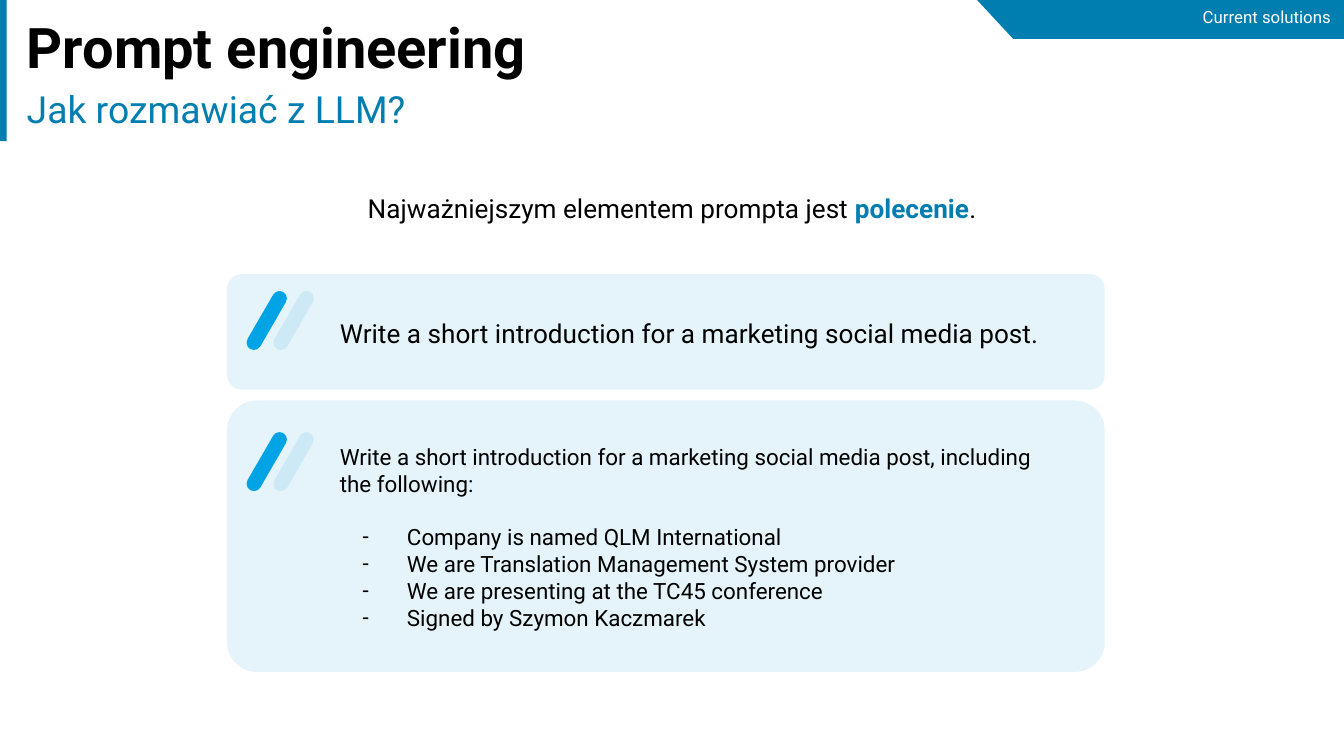
from dataclasses import dataclass

import pptx
import pptx.dml.color
import pptx.enum.shapes
import pptx.enum.text
import pptx.oxml.ns
import pptx.util
from lxml import etree
from pptx.util import Inches

ALIGN = pptx.enum.text.PP_ALIGN
SHAPE = pptx.enum.shapes.MSO_SHAPE


@dataclass(frozen=True)
class Theme:
    font: str = "Roboto"
    black: str = "000000"
    white: str = "FFFFFF"
    blue: str = "007EB0"
    bright: str = "00A4E4"
    pale: str = "CCE9F5"
    card: str = "E5F4FA"
    title: int = 30
    subtitle: int = 20
    body: int = 14
    detail: int = 12
    label: int = 9


THEME = Theme()
CARD_LEFT, CARD_WIDTH = 1.69, 6.53
FACTS = (
    "Company is named QLM International",
    "We are Translation Management System provider",
    "We are presenting at the TC45 conference",
    "Signed by Szymon Kaczmarek",
)


def rgb(color):
    return pptx.dml.color.RGBColor.from_string(color)


def paint(shape, color):
    shape.shadow.inherit = False
    shape.fill.solid()
    shape.fill.fore_color.rgb = rgb(color)
    shape.line.fill.background()


def place(shape, left, top, width, height):
    shape.left, shape.top = Inches(left), Inches(top)
    shape.width, shape.height = Inches(width), Inches(height)


def add_block(slide, kind, box, color, corner=None, rotation=0):
    shape = slide.shapes.add_shape(kind, *map(Inches, box))
    paint(shape, color)
    shape.rotation = rotation
    if corner is not None:
        shape.adjustments[0] = corner


def add_ribbon(slide):
    builder = slide.shapes.build_freeform(Inches(7.27), 0)
    corners = ((10, 0), (10, 0.29), (7.54, 0.29))
    builder.add_line_segments([(Inches(x), Inches(y)) for x, y in corners], close=True)
    paint(builder.convert_to_shape(), THEME.blue)


def format_frame(shape, vertical_inset):
    frame = shape.text_frame
    frame.word_wrap = True
    frame.auto_size = pptx.enum.text.MSO_AUTO_SIZE.NONE
    frame.vertical_anchor = pptx.enum.text.MSO_ANCHOR.TOP
    frame.margin_left = frame.margin_right = Inches(0.1)
    frame.margin_top = frame.margin_bottom = Inches(vertical_inset)
    return frame


def style(paragraph, size, color=THEME.black, bold=False, align=ALIGN.LEFT):
    paragraph.alignment = align
    paragraph.font.name = THEME.font
    paragraph.font.size = pptx.util.Pt(size)
    paragraph.font.bold = bold
    paragraph.font.color.rgb = rgb(color)


def add_text(slide, box, text, size, color=THEME.black, align=ALIGN.LEFT, inset=0.1):
    frame = format_frame(slide.shapes.add_textbox(*map(Inches, box)), inset)
    paragraph = frame.paragraphs[0]
    paragraph.text = text
    style(paragraph, size, color, align=align)
    return frame


def add_dash(paragraph):
    """Give the paragraph a hanging dash bullet."""
    properties = paragraph._p.get_or_add_pPr()
    properties.set("marL", str(Inches(0.5)))
    properties.set("indent", str(Inches(-0.33)))
    for tag, name, value in (("a:buFont", "typeface", THEME.font), ("a:buChar", "char", "-")):
        etree.SubElement(properties, pptx.oxml.ns.qn(tag)).set(name, value)


def add_prompt_card(slide, top, height, corner, mark_top):
    """Draw a rounded card with its two slanted strokes."""
    box = (CARD_LEFT, top, CARD_WIDTH, height)
    add_block(slide, SHAPE.ROUNDED_RECTANGLE, box, THEME.card, corner)
    for left, color in ((1.93, THEME.bright), (2.13, THEME.pale)):
        stroke = (left, mark_top, 0.11, 0.49)
        add_block(slide, SHAPE.ROUNDED_RECTANGLE, stroke, color, 0.5, 30)


def add_header(slide):
    add_ribbon(slide)
    add_block(slide, SHAPE.RECTANGLE, (0, -0.01, 0.05, 1.06), THEME.blue)
    title = slide.shapes.title
    place(title, 0.1, 0.04, 7.42, 0.54)
    paragraph = format_frame(title, 0.05).paragraphs[0]
    paragraph.text = "Prompt engineering"
    style(paragraph, THEME.title, bold=True)
    add_text(slide, (0.1, 0.59, 7.78, 0.37), "Jak rozmawiać z LLM?",
             THEME.subtitle, THEME.blue, inset=0.05)
    add_text(slide, (7.5, 0, 2.5, 0.29), "Current solutions",
             THEME.label, THEME.white, ALIGN.RIGHT, inset=0.05)


def add_statement(slide):
    frame = add_text(slide, (0, 1.33, 10, 0.44), "Najważniejszym elementem prompta jest ",
                     THEME.body, align=ALIGN.CENTER)
    paragraph = frame.paragraphs[0]
    keyword = paragraph.add_run()
    keyword.text = "polecenie"
    keyword.font.bold = True
    keyword.font.color.rgb = rgb(THEME.blue)
    paragraph.add_run().text = "."


def add_prompts(slide):
    add_prompt_card(slide, 2.04, 0.86, 0.125, 2.14)
    add_text(slide, (2.43, 2.26, 5.88, 0.44),
             "Write a short introduction for a marketing social media post.", THEME.body)

    add_prompt_card(slide, 2.98, 2.02, 0.11, 3.19)
    frame = add_text(
        slide, (2.43, 3.2, 5.44, 2.02),
        "Write a short introduction for a marketing social media post, including the following:",
        THEME.detail)
    frame.paragraphs[0].space_after = pptx.util.Pt(14)
    for fact in FACTS:
        paragraph = frame.add_paragraph()
        paragraph.text = fact
        add_dash(paragraph)
        style(paragraph, THEME.detail)


def main():
    presentation = pptx.Presentation()
    presentation.slide_width = Inches(10)
    presentation.slide_height = Inches(10) * 9 // 16
    slide = presentation.slides.add_slide(presentation.slide_layouts[5])
    add_header(slide)
    add_statement(slide)
    add_prompts(slide)
    presentation.save("out.pptx")


if __name__ == "__main__":
    main()
